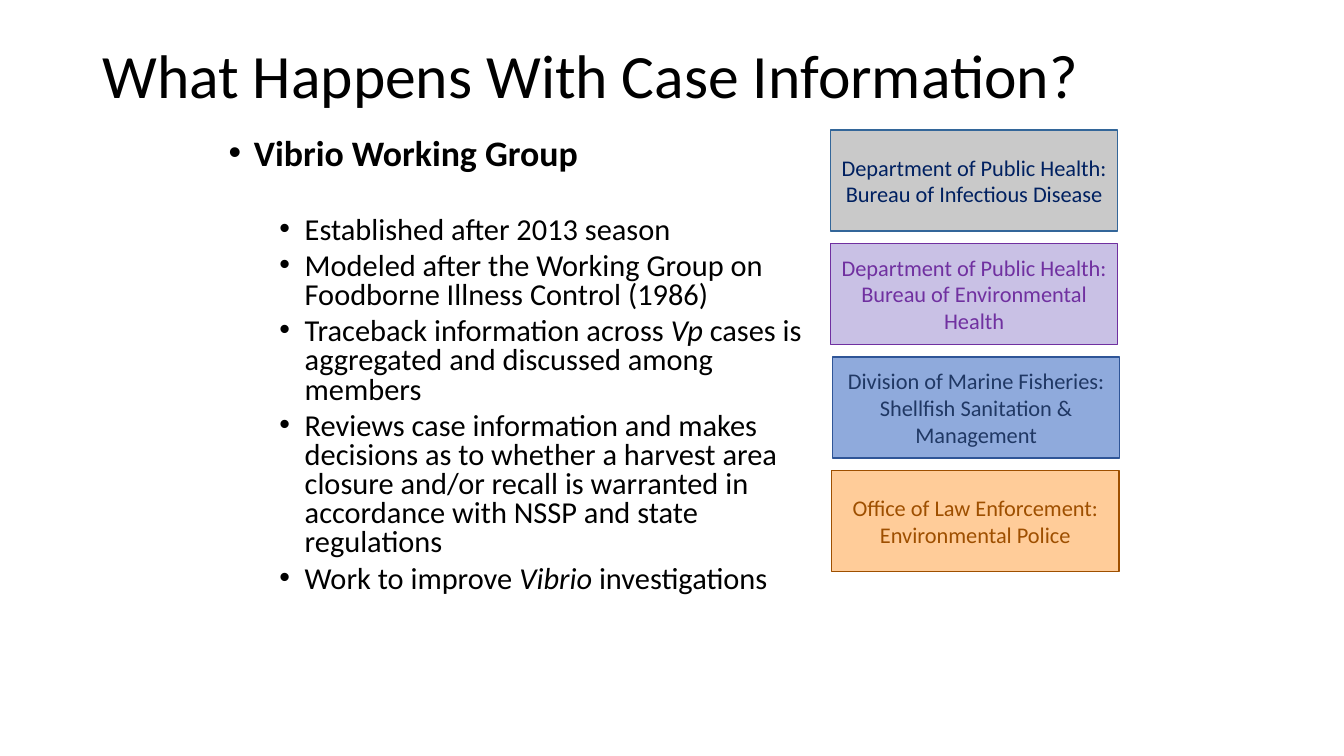
from lxml import etree
from pptx import Presentation
from pptx import util as u
from pptx.dml.color import RGBColor
from pptx.enum import shapes, text
from pptx.oxml.ns import qn

FONT = "Calibri"
BULLET_INDENT = u.Cm(0.64)

WORKING_GROUP_POINTS = [
    "Established after 2013 season",
    "Modeled after the Working Group on Foodborne Illness Control (1986)",
    "Traceback information across *Vp* cases is aggregated and discussed among members",
    "Reviews case information and makes decisions as to whether a harvest area closure "
    "and/or recall is warranted in accordance with NSSP and state regulations",
    "Work to improve *Vibrio* investigations",
]

# Text, left edge in cm, fill, line colour, text colour
AGENCIES = [
    ("Department of Public Health: Bureau of Infectious Disease",
     20.93, "C9C9C9", "336699", "002060"),
    ("Department of Public Health: Bureau of Environmental Health",
     20.93, "C9C1E5", "7030A0", "7030A0"),
    ("Division of Marine Fisheries: Shellfish Sanitation & Management",
     20.98, "8FAADC", "2F5597", "203864"),
    ("Office of Law Enforcement: Environmental Police",
     20.96, "FFCC99", "9E4F00", "9E4F00"),
]


def colour(hex_code):
    return RGBColor.from_string(hex_code)


def write(paragraph, content, size, color="000000", bold=False, spacing=1.0,
          before=0, align=text.PP_ALIGN.LEFT):
    """Fill a paragraph; words between asterisks are italic."""
    paragraph.alignment = align
    paragraph.line_spacing = spacing
    paragraph.space_before = u.Pt(before)
    for index, part in enumerate(content.split("*")):
        run = paragraph.add_run()
        run.text = part
        run.font.name = FONT
        run.font.size = u.Pt(size)
        run.font.bold = bold
        run.font.italic = index % 2 == 1
        run.font.color.rgb = colour(color)


def add_bullet(paragraph, margin):
    properties = paragraph._p.get_or_add_pPr()
    properties.set("marL", str(margin))
    properties.set("indent", str(-BULLET_INDENT))
    etree.SubElement(properties, qn("a:buFont"), typeface="Arial")
    etree.SubElement(properties, qn("a:buChar"), char="•")


def add_text_frame(slide, left, top, width, height):
    box = slide.shapes.add_textbox(u.Cm(left), u.Cm(top), u.Cm(width), u.Cm(height))
    box.text_frame.word_wrap = True
    return box.text_frame


def add_title(slide, content):
    frame = add_text_frame(slide, 2.33, 1.02, 29.21, 3.68)
    write(frame.paragraphs[0], content, 44, spacing=0.9)


def add_working_group(slide, heading, points):
    frame = add_text_frame(slide, 5.51, 3.38, 15.04, 12.57)
    write(frame.paragraphs[0], heading, 25.6, bold=True, spacing=0.8)
    add_bullet(frame.paragraphs[0], BULLET_INDENT)
    for index, point in enumerate(points):
        paragraph = frame.add_paragraph()
        paragraph.level = 1
        # The first point stands clear of the heading
        write(paragraph, point, 21.7, spacing=0.8, before=5 if index else 31)
        add_bullet(paragraph, 3 * BULLET_INDENT)


def add_agency(slide, content, left, top, fill, line, color):
    shape = slide.shapes.add_shape(shapes.MSO_SHAPE.RECTANGLE,
                                   u.Cm(left), u.Cm(top), u.Cm(7.24), u.Cm(2.54))
    shape.shadow.inherit = False
    shape.fill.solid()
    shape.fill.fore_color.rgb = colour(fill)
    shape.line.color.rgb = colour(line)
    shape.line.width = u.Pt(1)
    frame = shape.text_frame
    frame.word_wrap = True
    frame.vertical_anchor = text.MSO_ANCHOR.MIDDLE
    write(frame.paragraphs[0], content, 16, color=color, align=text.PP_ALIGN.CENTER)


def main():
    presentation = Presentation()
    presentation.slide_width = u.Cm(33.87)
    presentation.slide_height = u.Cm(19.05)
    slide = presentation.slides.add_slide(presentation.slide_layouts[6])

    # Working group description
    add_working_group(slide, "Vibrio Working Group", WORKING_GROUP_POINTS)
    add_title(slide, "What Happens With Case Information?")

    # Column of member agencies
    for row, (content, left, fill, line, color) in enumerate(AGENCIES):
        add_agency(slide, content, left, 3.28 + 2.86 * row, fill, line, color)

    presentation.save("out.pptx")


if __name__ == "__main__":
    main()
